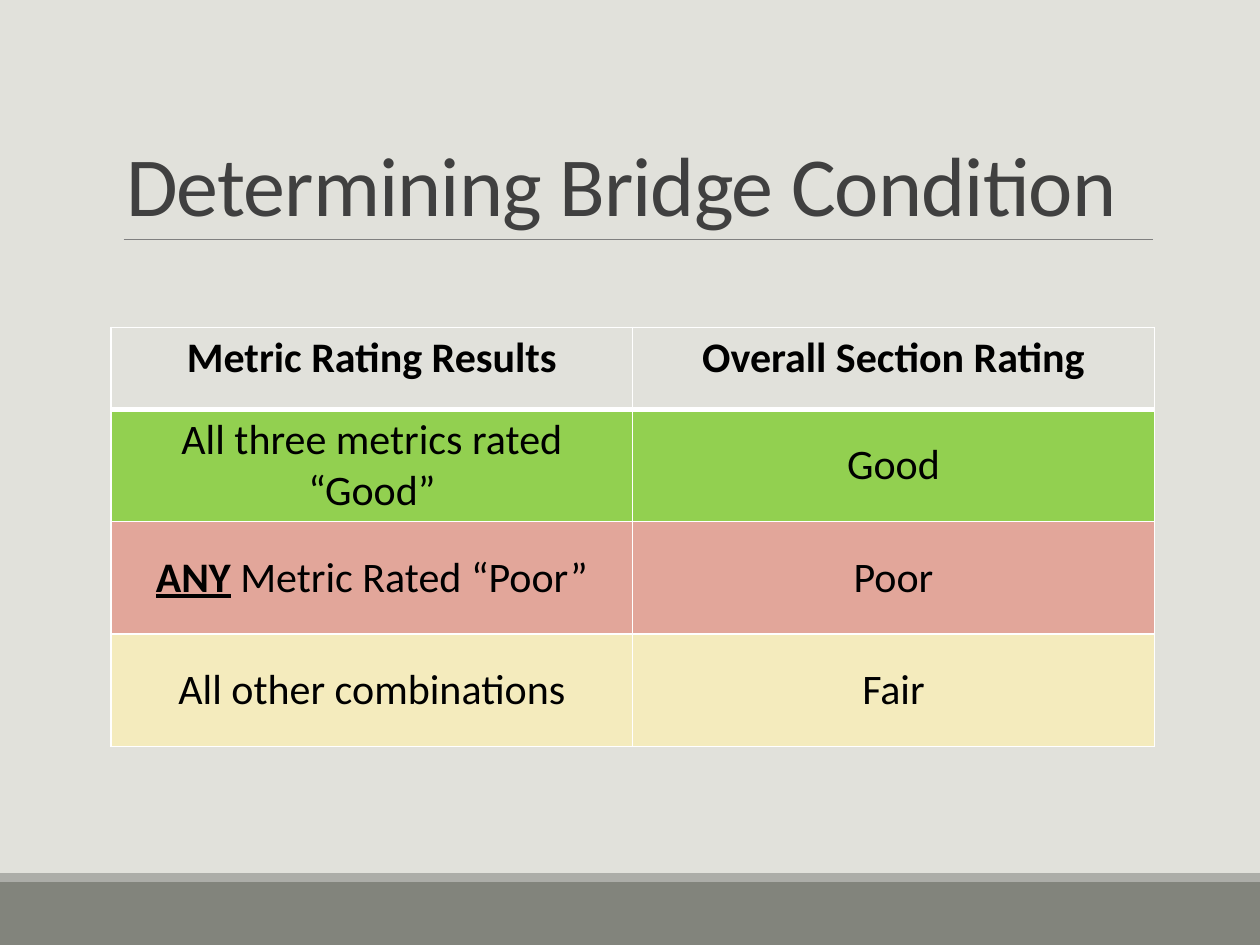
from lxml import etree
from pptx import Presentation
from pptx.dml.color import RGBColor
from pptx.enum.shapes import MSO_CONNECTOR, MSO_SHAPE
from pptx.enum.text import MSO_ANCHOR, MSO_AUTO_SIZE, PP_ALIGN
from pptx.oxml.ns import qn
from pptx.util import Cm, Pt

RECTANGLE = MSO_SHAPE.RECTANGLE
STRAIGHT = MSO_CONNECTOR.STRAIGHT
TOP, MIDDLE, BOTTOM = MSO_ANCHOR.TOP, MSO_ANCHOR.MIDDLE, MSO_ANCHOR.BOTTOM
LEFT, CENTER = PP_ALIGN.LEFT, PP_ALIGN.CENTER
NO_AUTOFIT = MSO_AUTO_SIZE.NONE

FONT = "Calibri"
PAGE_COLOR = RGBColor(0xE1, 0xE1, 0xDB)
BAND = RGBColor(0x82, 0x84, 0x7C)
STRIPE = RGBColor(0xAC, 0xAD, 0xA8)
RULE = RGBColor(0x80, 0x80, 0x80)
TITLE = RGBColor(0x40, 0x40, 0x40)
BLACK = RGBColor(0x00, 0x00, 0x00)
WHITE = RGBColor(0xFF, 0xFF, 0xFF)
GOOD = RGBColor(0x92, 0xD0, 0x50)
POOR = RGBColor(0xE2, 0xA6, 0x9A)
FAIR = RGBColor(0xF4, 0xEB, 0xBD)

# Each row: fill, then the runs of its two cells as (text, emphasised)
HEADER = (None, [("Metric Rating Results", False)], [("Overall Section Rating", False)])
RATINGS = [
    (GOOD, [("All three metrics rated “Good”", False)], [("Good", False)]),
    (POOR, [("ANY", True), (" Metric Rated “Poor”", False)], [("Poor", False)]),
    (FAIR, [("All other combinations", False)], [("Fair", False)]),
]


def add_span(para, text, size, color, bold=False, underline=False):
    span = para.add_run()
    span.text = text
    font = span.font
    font.name, font.size, font.bold, font.underline = FONT, Pt(size), bold, underline
    font.color.rgb = color
    return span


def add_footer(page, left, top, width, height):
    """Dark band with a thin lighter stripe along its top edge."""
    stripe_height = Cm(0.18)
    for color, y, tall in ((BAND, top + stripe_height, height - stripe_height),
                           (STRIPE, top, stripe_height)):
        bar = page.shapes.add_shape(RECTANGLE, left, y, width, tall)
        bar.shadow.inherit = False
        bar.fill.solid()
        bar.fill.fore_color.rgb = color
        bar.line.fill.background()


def add_heading(page, left, top, width, height):
    """Title resting on a thin rule."""
    title = page.shapes.title
    title.left, title.top, title.width, title.height = left, top, width, height
    frame = title.text_frame
    frame.auto_size = NO_AUTOFIT
    frame.word_wrap = True
    frame.vertical_anchor = BOTTOM
    para = frame.paragraphs[0]
    para.alignment = LEFT
    para.line_spacing = 0.85
    span = add_span(para, "Determining Bridge Condition", 48, TITLE)
    span.font._element.set("spc", "-50")

    bottom = top + height
    rule = page.shapes.add_connector(STRAIGHT, left + Cm(0.2), bottom, left + width, bottom)
    rule.line.color.rgb = RULE
    rule.line.width = Pt(0.5)
    etree.SubElement(rule._element.spPr, qn("a:effectLst"))


def set_borders(cell, widths):
    """White borders; widths in points by side, in schema order."""
    properties = cell._tc.get_or_add_tcPr()
    for side, width in widths.items():
        border = etree.SubElement(properties, qn(f"a:ln{side}"), w=str(Pt(width)))
        fill = etree.SubElement(border, qn("a:solidFill"))
        etree.SubElement(fill, qn("a:srgbClr"), val=str(WHITE))


def fill_cell(cell, runs, color, top_border, bottom_border):
    is_header = color is None
    set_borders(cell, {"L": 1, "R": 1, "T": top_border, "B": bottom_border})
    if is_header:
        cell.fill.background()
    else:
        cell.fill.solid()
        cell.fill.fore_color.rgb = color
    cell.margin_left = cell.margin_right = Cm(0.19)
    cell.margin_top = cell.margin_bottom = Cm(0.1)
    cell.vertical_anchor = TOP if is_header else MIDDLE
    para = cell.text_frame.paragraphs[0]
    para.alignment = CENTER
    for text, emphasised in runs:
        add_span(para, text, 24, BLACK, is_header or emphasised, emphasised)


def add_rating_table(page, left, top, width, height):
    rows = [HEADER, *RATINGS]
    table = page.shapes.add_table(len(rows), 2, left, top, width, height).table
    table.horz_banding = False
    header_height = Cm(1.65)
    for column in table.columns:
        column.width = width // 2
    for index, (color, *cells) in enumerate(rows):
        table.rows[index].height = (
            (height - header_height) // len(RATINGS) if index else header_height)
        for column, runs in enumerate(cells):
            # A heavier line parts the header from the ratings
            fill_cell(table.cell(index, column), runs, color,
                      3 if index == 1 else 1, 3 if index == 0 else 1)


def main():
    deck = Presentation()
    deck.slide_width, deck.slide_height = Cm(25.4), Cm(19.05)
    page = deck.slides.add_slide(deck.slide_layouts[5])
    page.background.fill.solid()
    page.background.fill.fore_color.rgb = PAGE_COLOR

    add_footer(page, 0, Cm(17.6), deck.slide_width, Cm(1.45))
    add_heading(page, Cm(2.29), Cm(0.79), Cm(20.95), Cm(4.04))
    add_rating_table(page, Cm(2.24), Cm(6.6), Cm(21.03), Cm(8.45))
    deck.save("out.pptx")


if __name__ == "__main__":
    main()
